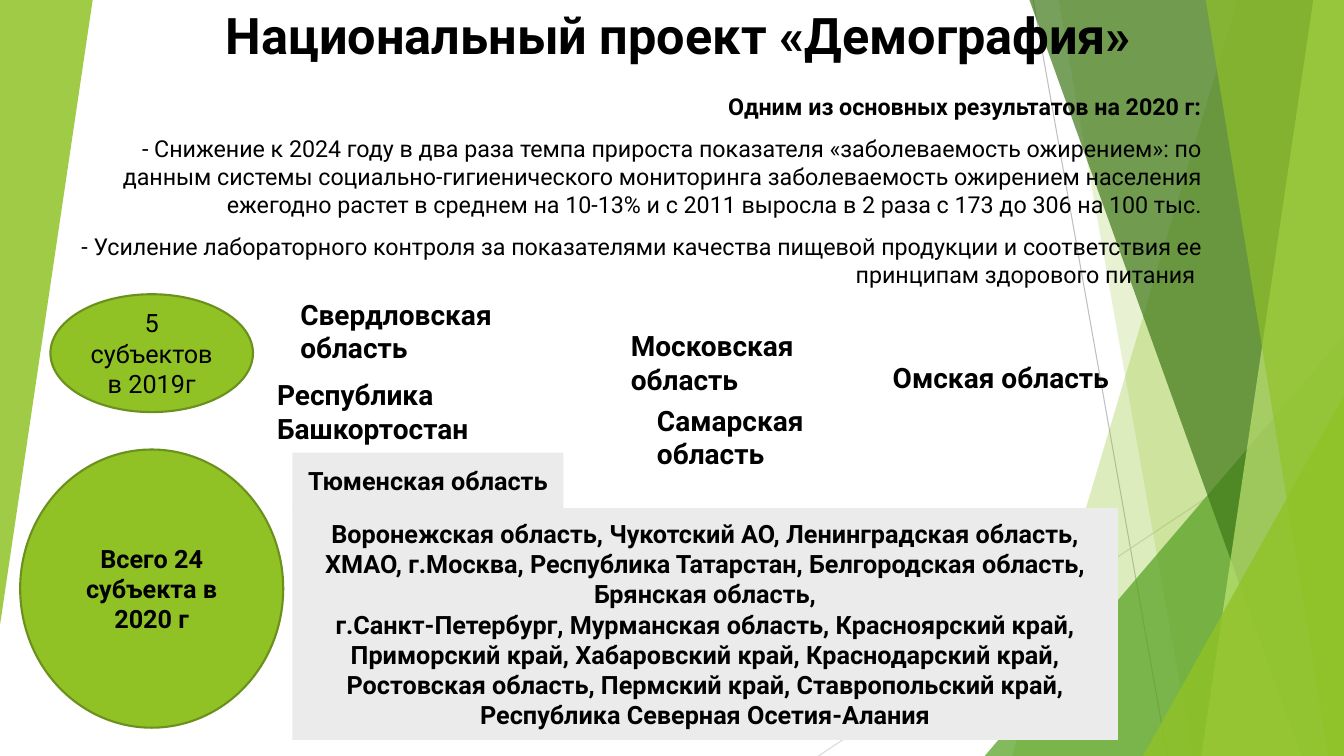
from lxml.etree import SubElement
from pptx import Presentation
from pptx.dml.color import RGBColor
from pptx.enum.shapes import MSO_CONNECTOR, MSO_SHAPE as SHAPE
from pptx.enum.text import MSO_ANCHOR as ANCHOR, MSO_AUTO_SIZE as AUTO, PP_ALIGN as ALIGN
from pptx.oxml.ns import qn
from pptx.util import Pt

WIDTH, HEIGHT = 960, 540
FONT = "Roboto"
BLACK = RGBColor(0x00, 0x00, 0x00)
GREEN = RGBColor(0x90, 0xC2, 0x26)
MID_GREEN = RGBColor(0x54, 0xA0, 0x21)
DARK_GREEN = RGBColor(0x3F, 0x78, 0x19)
LIGHT_GREEN = RGBColor(0xC0, 0xE4, 0x74)
OUTLINE = RGBColor(0x6B, 0x90, 0x1C)
PANEL = RGBColor(0xEB, 0xEB, 0xEB)
GREY = RGBColor(0xBF, 0xBF, 0xBF)
LIGHT_GREY = RGBColor(0xD9, 0xD9, 0xD9)

RESULTS = [
    "Одним из основных результатов на 2020 г:",
    "- Снижение к 2024 году в два раза темпа прироста показателя «заболеваемость "
    "ожирением»: по данным системы социально-гигиенического мониторинга "
    "заболеваемость ожирением населения ежегодно растет в среднем на 10-13% "
    "и с 2011 выросла в 2 раза с 173 до 306 на 100 тыс.",
    "- Усиление лабораторного контроля за показателями качества пищевой продукции "
    "и соответствия ее принципам здорового питания ",
]
NEW_REGIONS = [
    "Воронежская область, Чукотский АО, Ленинградская область, ХМАО, г.Москва, "
    "Республика Татарстан, Белгородская область, Брянская область,",
    "г.Санкт-Петербург, Мурманская область, Красноярский край, Приморский край, "
    "Хабаровский край, Краснодарский край, Ростовская область, Пермский край, "
    "Ставропольский край, Республика Северная Осетия-Алания",
]
# Region name, left, top, width, alignment
REGIONS_2019 = [
    ("Московская область", 443.5, 231.1, 197.3, ALIGN.LEFT),
    ("Республика Башкортостан", 190.8, 266.4, 252.7, ALIGN.LEFT),
    ("Самарская область", 462.2, 284.4, 186.5, ALIGN.LEFT),
    ("Омская область", 626.4, 254.2, 177.1, ALIGN.CENTER),
    ("Свердловская область", 207.4, 208.8, 216, ALIGN.LEFT),
]


def write(frame, paragraphs, size, align, bold=True):
    frame.word_wrap = True
    frame.text = "\n".join(paragraphs)
    for paragraph in frame.paragraphs:
        paragraph.alignment = align
        for run in paragraph.runs:
            run.font.name = FONT
            run.font.size = Pt(size)
            run.font.bold = bold
            run.font.color.rgb = BLACK


def add_ray(shapes, start, end, color):
    ray = shapes.add_connector(MSO_CONNECTOR.STRAIGHT, *map(Pt, start + end))
    ray.line.color.rgb = color
    ray.line.width = Pt(0.75)
    SubElement(ray.element.spPr, qn("a:effectLst"))


def paint_glass(shape, color, opacity):
    shape.shadow.inherit = False
    shape.fill.solid()
    shape.fill.fore_color.rgb = color
    rgb = shape.element.spPr.find(".//" + qn("a:srgbClr"))
    SubElement(rgb, qn("a:alpha")).set("val", str(opacity * 1000))
    shape.line.fill.background()


def add_facet(shapes, top_x, bottom_x, color, opacity):
    """Full-height band from a slanted left edge to the right of the slide."""
    top = Pt(-0.7)
    builder = shapes.build_freeform(Pt(top_x), top)
    builder.add_line_segments([(Pt(WIDTH), top), (Pt(WIDTH), Pt(HEIGHT)),
                               (Pt(bottom_x), Pt(HEIGHT))])
    paint_glass(builder.convert_to_shape(), color, opacity)


def add_wedge(shapes, box, color, opacity, rotation=0):
    wedge = shapes.add_shape(SHAPE.ISOSCELES_TRIANGLE, *map(Pt, box))
    wedge.adjustments[0] = 1
    wedge.rotation = rotation
    paint_glass(wedge, color, opacity)


def add_backdrop(slide):
    shapes = slide.shapes.add_group_shape().shapes
    add_ray(shapes, (738, 0), (833.8, HEIGHT), GREY)
    add_ray(shapes, (WIDTH, 290.2), (584.6, HEIGHT), LIGHT_GREY)
    add_facet(shapes, 884.2, 722.9, GREEN, 30)
    add_facet(shapes, 756, 851.8, GREEN, 20)
    add_wedge(shapes, (703.4, 239.8, 256.6, 300.2), MID_GREEN, 72)
    add_facet(shapes, 735.1, 929.5, DARK_GREEN, 70)
    add_facet(shapes, 938.2, 858.2, LIGHT_GREEN, 70)
    add_facet(shapes, 861.1, 949, GREEN, 65)
    add_wedge(shapes, (816.5, 283, 143.5, 257), GREEN, 80)
    add_wedge(shapes, (0, 0, 66.2, 446.4), GREEN, 85, rotation=180)


def place_title(slide, text):
    title = slide.shapes.title
    title.element.getparent().append(title.element)  # bring in front of the backdrop
    title.left, title.top, title.width, title.height = map(Pt, (98.6, 43.2, 717.1, 49))
    frame = title.text_frame
    write(frame, [text], 36, ALIGN.RIGHT)
    frame.auto_size = AUTO.NONE
    frame.vertical_anchor = ANCHOR.BOTTOM
    frame.margin_top = 0
    frame.margin_bottom = Pt(45.8)  # lifts the line to the top of the slide


def add_text(slide, box, paragraphs, size, align):
    frame = slide.shapes.add_textbox(*map(Pt, box)).text_frame
    write(frame, paragraphs, size, align)
    return frame


def add_results(slide):
    frame = add_text(slide, (36, 62.6, 828.7, 158.4), RESULTS, 16.6, ALIGN.RIGHT)
    for paragraph in frame.paragraphs:
        paragraph.space_before = Pt(10)
    for result in frame.paragraphs[1:]:
        result.runs[0].font.bold = False


def add_block(slide, kind, box, paragraphs, fill, outline=None, bold=True):
    block = slide.shapes.add_shape(kind, *map(Pt, box))
    block.shadow.inherit = False
    block.fill.solid()
    block.fill.fore_color.rgb = fill
    if outline is None:
        block.line.fill.background()
    else:
        block.line.color.rgb = outline
        block.line.width = Pt(1.5)
    write(block.text_frame, paragraphs, 18, ALIGN.CENTER, bold)
    block.text_frame.vertical_anchor = ANCHOR.MIDDLE


def main():
    deck = Presentation()
    deck.slide_width, deck.slide_height = Pt(WIDTH), Pt(HEIGHT)
    slide = deck.slides.add_slide(deck.slide_layouts[5])

    # Backdrop, heading and main results
    add_backdrop(slide)
    place_title(slide, "Национальный проект «Демография»")
    add_results(slide)

    # Regions of 2019
    for name, left, top, width, align in REGIONS_2019:
        add_text(slide, (left, top, width, 31.7), [name], 20, align)

    # Regions added in 2020
    add_block(slide, SHAPE.RECTANGLE, (208.8, 323.3, 193.7, 40.3),
              ["Тюменская область"], PANEL)
    add_block(slide, SHAPE.RECTANGLE, (208.8, 362.9, 589.7, 165.6), NEW_REGIONS, PANEL)

    # Totals by year
    add_block(slide, SHAPE.OVAL, (14.4, 321.1, 187.9, 198.7),
              ["Всего 24 субъекта в 2020 г"], GREEN, OUTLINE)
    add_block(slide, SHAPE.OVAL, (36, 210.2, 144.7, 84.2),
              ["5 субъектов в 2019г"], GREEN, OUTLINE, bold=False)

    deck.save("out.pptx")


if __name__ == "__main__":
    main()
